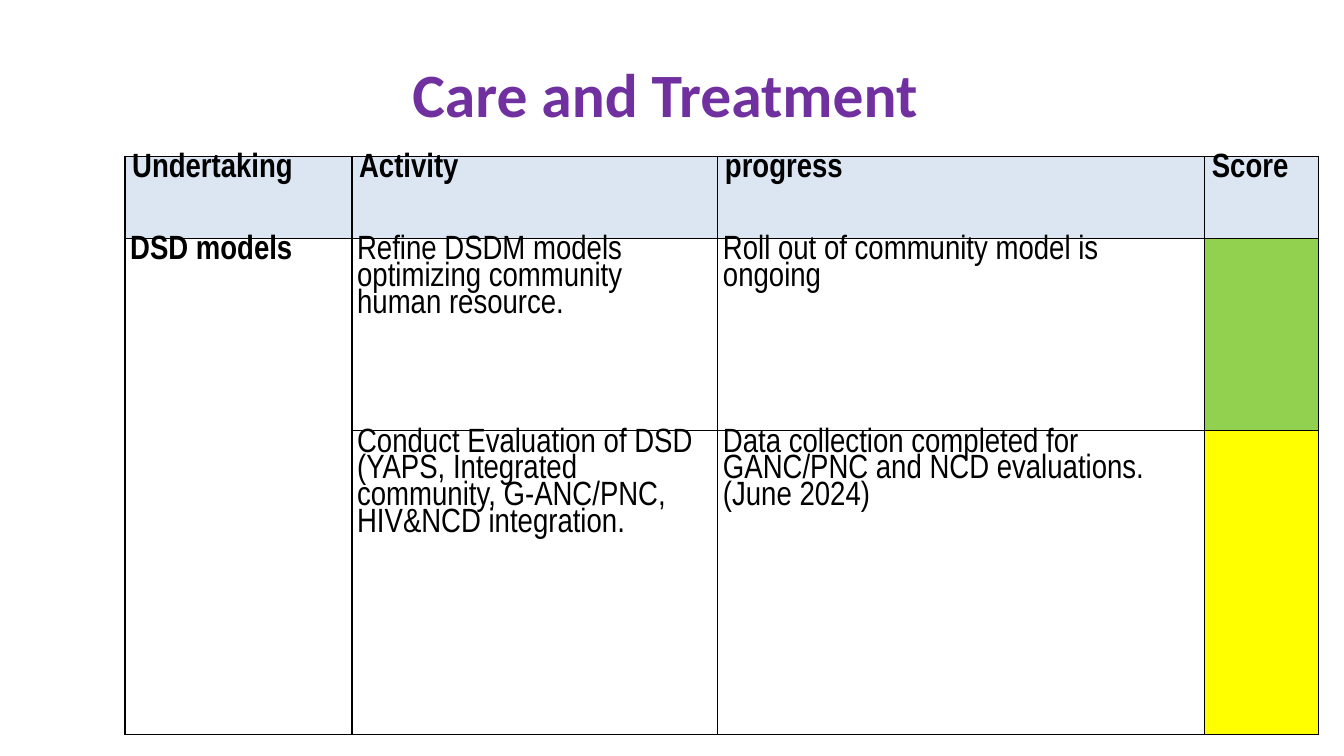
from pptx import Presentation
from pptx.dml.color import RGBColor
from pptx.enum.text import MSO_ANCHOR, PP_ALIGN
from pptx.oxml import parse_xml
from pptx.oxml.ns import nsdecls
from pptx.util import Cm, Pt

# Content
TITLE = "Care and Treatment "
HEAD = ["Undertaking", "Activity", "progress", "Score"]
ROWS = [
    ["DSD models",
     "Refine DSDM models optimizing community human resource.",
     "Roll out of community model is ongoing", "green"],
    ["",
     "Conduct Evaluation of DSD (YAPS, Integrated community, G-ANC/PNC, "
     "HIV&NCD integration.",
     "Data collection completed for GANC/PNC and NCD evaluations. "
     "(June 2024)", "yellow"],
]

# Layout in centimetres
TABLE_LEFT, TABLE_TOP = 3.15, 3.94
WIDTHS = [5.72, 9.22, 12.27, 2.87]
HEIGHTS = [2.06, 4.85, 7.65]

THEME = {
    "title": "7030A0", "text": "000000", "line": "000000",
    "head": "DCE6F2", "green": "92D050", "yellow": "FFFF00",
    "title_font": "Calibri", "title_size": 44,
    "font": "Arial Narrow", "size": 24, "spacing": 0.85, "border": 1,
}


def add_run(para, text, font, size, color, bold):
    run = para.add_run()
    run.text = text
    run.font.name, run.font.size, run.font.bold = font, Pt(size), bold
    run.font.color.rgb = RGBColor.from_string(THEME[color])


def add_borders(cell):
    props = cell._tc.get_or_add_tcPr()
    for place, side in enumerate(("lnL", "lnR", "lnT", "lnB")):
        props.insert(place, parse_xml(
            f'<a:{side} {nsdecls("a")} w="{Pt(THEME["border"])}">'
            f'<a:solidFill><a:srgbClr val="{THEME["line"]}"/></a:solidFill>'
            f'</a:{side}>'))


def fill_cell(cell, text, color, bold, inset):
    cell.margin_left = cell.margin_right = Cm(inset)
    cell.margin_top = cell.margin_bottom = 0
    cell.vertical_anchor = MSO_ANCHOR.TOP
    if color:
        cell.fill.solid()
        cell.fill.fore_color.rgb = RGBColor.from_string(THEME[color])
    else:
        cell.fill.background()
    add_borders(cell)
    if text:
        para = cell.text_frame.paragraphs[0]
        para.line_spacing = THEME["spacing"]
        add_run(para, text, THEME["font"], THEME["size"], "text", bold)


def add_title(slide):
    title = slide.shapes.title
    title.left, title.top = Cm(1.7), Cm(0.76)
    title.width, title.height = Cm(30.48), Cm(3.18)
    title.text_frame.vertical_anchor = MSO_ANCHOR.MIDDLE
    para = title.text_frame.paragraphs[0]
    para.alignment = PP_ALIGN.CENTER
    add_run(para, TITLE, THEME["title_font"], THEME["title_size"],
            "title", True)


def add_grid(slide):
    table = slide.shapes.add_table(
        len(HEIGHTS), len(WIDTHS), Cm(TABLE_LEFT), Cm(TABLE_TOP),
        Cm(sum(WIDTHS)), Cm(sum(HEIGHTS))).table
    table.horz_banding = False
    for col, width in zip(table.columns, WIDTHS):
        col.width = Cm(width)
    for row, height in zip(table.rows, HEIGHTS):
        row.height = Cm(height)

    # Header row
    for c, text in enumerate(HEAD):
        fill_cell(table.cell(0, c), text, "head", True, 0.18)

    # Body rows, the last column holds the score colour
    for r, (*texts, score) in enumerate(ROWS, 1):
        for c, text in enumerate(texts):
            fill_cell(table.cell(r, c), text, None, c == 0, 0.13)
        fill_cell(table.cell(r, len(texts)), "", score, False, 0.13)
    table.cell(1, 0).merge(table.cell(len(ROWS), 0))


def main():
    deck = Presentation()
    deck.slide_width, deck.slide_height = Cm(33.87), Cm(19.05)
    slide = deck.slides.add_slide(deck.slide_layouts[5])
    add_title(slide)
    add_grid(slide)
    deck.save("out.pptx")


if __name__ == "__main__":
    main()
